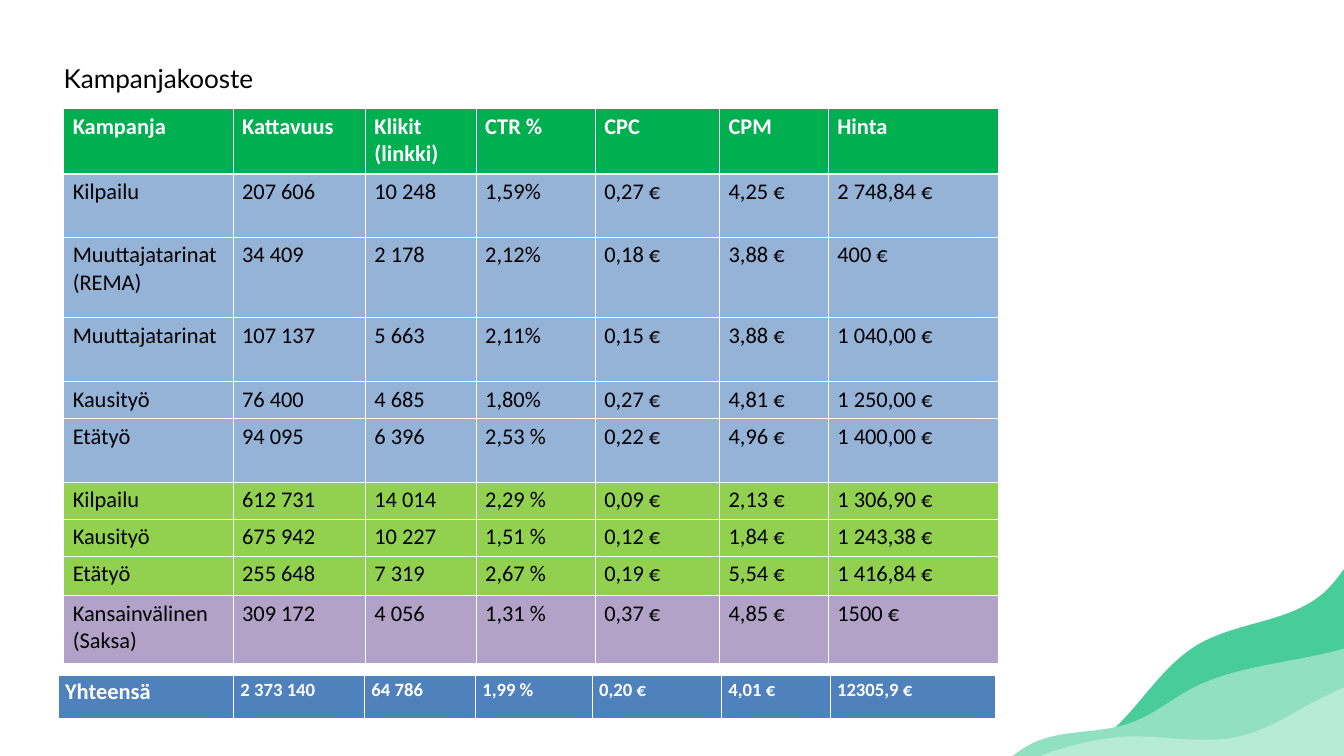
import pptx
import pptx.util
import pptx.dml.color
import pptx.oxml
import pptx.oxml.ns

Cm = pptx.util.Cm
Pt = pptx.util.Pt
RGB = pptx.dml.color.RGBColor
qn = pptx.oxml.ns.qn

WHITE = RGB(0xFF, 0xFF, 0xFF)
BLACK = RGB(0x00, 0x00, 0x00)
HEAD = RGB(0x00, 0xB0, 0x50)
BLUE = RGB(0x95, 0xB3, 0xD7)
LIME = RGB(0x92, 0xD0, 0x50)
LILAC = RGB(0xB3, 0xA2, 0xC7)
TOTAL = RGB(0x4F, 0x81, 0xBD)
GREEN = RGB(0x48, 0xCC, 0x9A)
MINT = RGB(0x92, 0xE0, 0xC2)
PALE = RGB(0xB6, 0xEB, 0xD5)

# Each wave: colour, start point, then three points per curve (cm)
WAVES = [
    (GREEN, (12.52, 0), [
        (12.29, 0.3), (12.09, 0.58), (11.81, 0.84),
        (10.52, 2.03), (8.48, 1.96), (6.96, 2.87),
        (5.41, 3.81), (4.62, 5.61), (3.1, 6.6),
        (2.82, 6.78), (2.51, 6.93), (2.21, 7.06)]),
    (MINT, (12.52, 3), [
        (10.57, 3.56), (8.41, 3.61), (6.65, 4.57),
        (5.92, 4.98), (5.28, 5.51), (4.5, 5.79),
        (3.3, 6.25), (1.91, 6.02), (0.74, 6.58),
        (0.46, 6.71), (0.23, 6.88), (0, 7.06)]),
    (PALE, (12.52, 4.47), [
        (12.07, 4.67), (11.63, 4.88), (11.2, 5.11),
        (10.36, 5.59), (9.5, 6.1), (8.56, 6.32),
        (8.1, 6.43), (7.65, 6.45), (7.21, 6.45),
        (6.35, 6.45), (5.49, 6.32), (4.65, 6.32),
        (4.55, 6.32), (4.45, 6.32), (4.37, 6.32),
        (3.23, 6.38), (2.11, 6.65), (1.04, 7.06)]),
]

# Each row: height (cm), fill, cell texts
ROWS = [
    (2.46, HEAD, ["Kampanja", "Kattavuus", "Klikit (linkki)", "CTR %", "CPC", "CPM", "Hinta"]),
    (2.39, BLUE, ["Kilpailu", "207 606", "10 248", "1,59%", "0,27 €", "4,25 €", "2 748,84 €"]),
    (3.05, BLUE, ["Muuttajatarinat\n(REMA)", "34 409", "2 178", "2,12%", "0,18 €", "3,88 €", "400 €"]),
    (2.41, BLUE, ["Muuttajatarinat", "107 137", "5 663", "2,11%", "0,15 €", "3,88 €", "1 040,00 €"]),
    (1.4, BLUE, ["Kausityö", "76 400", "4 685", "1,80%", "0,27 €", "4,81 €", "1 250,00 €"]),
    (2.41, BLUE, ["Etätyö", "94 095", "6 396", "2,53 %", "0,22 €", "4,96 €", "1 400,00 €"]),
    (1.4, LIME, ["Kilpailu", "612 731", "14 014", "2,29 %", "0,09 €", "2,13 €", "1 306,90 €"]),
    (1.4, LIME, ["Kausityö", "675 942", "10 227", "1,51 %", "0,12 €", "1,84 €", "1 243,38 €"]),
    (1.48, LIME, ["Etätyö", "255 648", "7 319", "2,67 %", "0,19 €", "5,54 €", "1 416,84 €"]),
    (2.59, LILAC, ["Kansainvälinen (Saksa)", "309 172", "4 056", "1,31 %", "0,37 €", "4,85 €", "1500 €"]),
]
COLS = [6.4, 5, 4.19, 4.5, 4.7, 4.11, 6.43]

SUMS = [(1.65, TOTAL, ["Yhteensä", "2 373 140", "64 786", "1,99 %", "0,20 €", "4,01 €", "12305,9 €"])]
SUMCOLS = [6.63, 4.95, 4.19, 4.42, 4.88, 4.11, 6.25]


def add_run(para, text, font, size, color, bold=False):
    run = para.add_run()
    run.text = text
    run.font.name = font
    run.font.size = Pt(size)
    run.font.bold = bold
    run.font.color.rgb = color


def add_edges(cell, low):
    """White cell borders; low is the width of the bottom one."""
    props = cell._tc.get_or_add_tcPr()
    for i, (tag, width) in enumerate([("lnL", 1), ("lnR", 1), ("lnT", 1), ("lnB", low)]):
        props.insert(i, pptx.oxml.parse_xml(
            f'<a:{tag} xmlns:a="http://schemas.openxmlformats.org/drawingml/2006/main"'
            f' w="{Pt(width)}"><a:solidFill><a:srgbClr val="{WHITE}"/></a:solidFill></a:{tag}>'))


def add_waves(slide, left, top):
    for color, start, points in WAVES:
        spots = [(Cm(left + x), Cm(top + y)) for x, y in points]
        base = Cm(top + 7.06)
        build = slide.shapes.build_freeform(Cm(left + start[0]), Cm(top + start[1]))
        build.add_line_segments(spots + [(Cm(left + 12.52), base)], close=True)
        wave = build.convert_to_shape()
        wave.shadow.inherit = False
        wave.fill.solid()
        wave.fill.fore_color.rgb = color
        wave.line.fill.background()
        # Join every three points into one curve
        lines = list(wave._element.iter(qn("a:lnTo")))[:len(points)]
        for i in range(0, len(lines), 3):
            curve = lines[i].makeelement(qn("a:cubicBezTo"), {})
            lines[i].addprevious(curve)
            for line in lines[i:i + 3]:
                curve.append(line[0])
                line.getparent().remove(line)


def add_title(slide, left, top, width, height):
    box = slide.shapes.add_textbox(Cm(left), Cm(top), Cm(width), Cm(height))
    frame = box.text_frame
    frame.word_wrap = True
    frame.margin_left = frame.margin_right = 0
    frame.margin_top = frame.margin_bottom = 0
    para = frame.paragraphs[0]
    para.line_spacing = Pt(28)
    add_run(para, "Kampanjakooste", "Lato", 28, BLACK)


def add_grid(slide, left, top, cols, rows, pad, size):
    """Table whose first row is bold; size is for its cells after the first."""
    high = sum(row[0] for row in rows)
    table = slide.shapes.add_table(len(rows), len(cols), Cm(left), Cm(top),
                                   Cm(sum(cols)), Cm(high)).table
    table.horz_banding = False
    for col, width in zip(table.columns, cols):
        col.width = Cm(width)
    for r, (height, fill, texts) in enumerate(rows):
        table.rows[r].height = Cm(height)
        for c, text in enumerate(texts):
            cell = table.cell(r, c)
            cell.margin_left = cell.margin_right = Cm(pad)
            cell.margin_top = cell.margin_bottom = Cm(pad / 2)
            cell.fill.solid()
            cell.fill.fore_color.rgb = fill
            add_edges(cell, 3 if r == 0 else 1)
            frame = cell.text_frame
            for i, part in enumerate(text.split("\n")):
                para = frame.add_paragraph() if i else frame.paragraphs[0]
                add_run(para, part, "Calibri", size if c else 24,
                        BLACK if r else WHITE, r == 0)


def main():
    deck = pptx.Presentation()
    deck.slide_width = Cm(50.8)
    deck.slide_height = Cm(28.58)
    slide = deck.slides.add_slide(deck.slide_layouts[6])
    add_waves(slide, 38.28, 21.52)
    add_title(slide, 2.41, 2.54, 12.9, 1)
    # Campaigns, then their totals
    add_grid(slide, 2.41, 4.11, COLS, ROWS, 0.34, 24)
    add_grid(slide, 2.21, 25.53, SUMCOLS, SUMS, 0.25, 20)
    deck.save("out.pptx")


if __name__ == "__main__":
    main()
